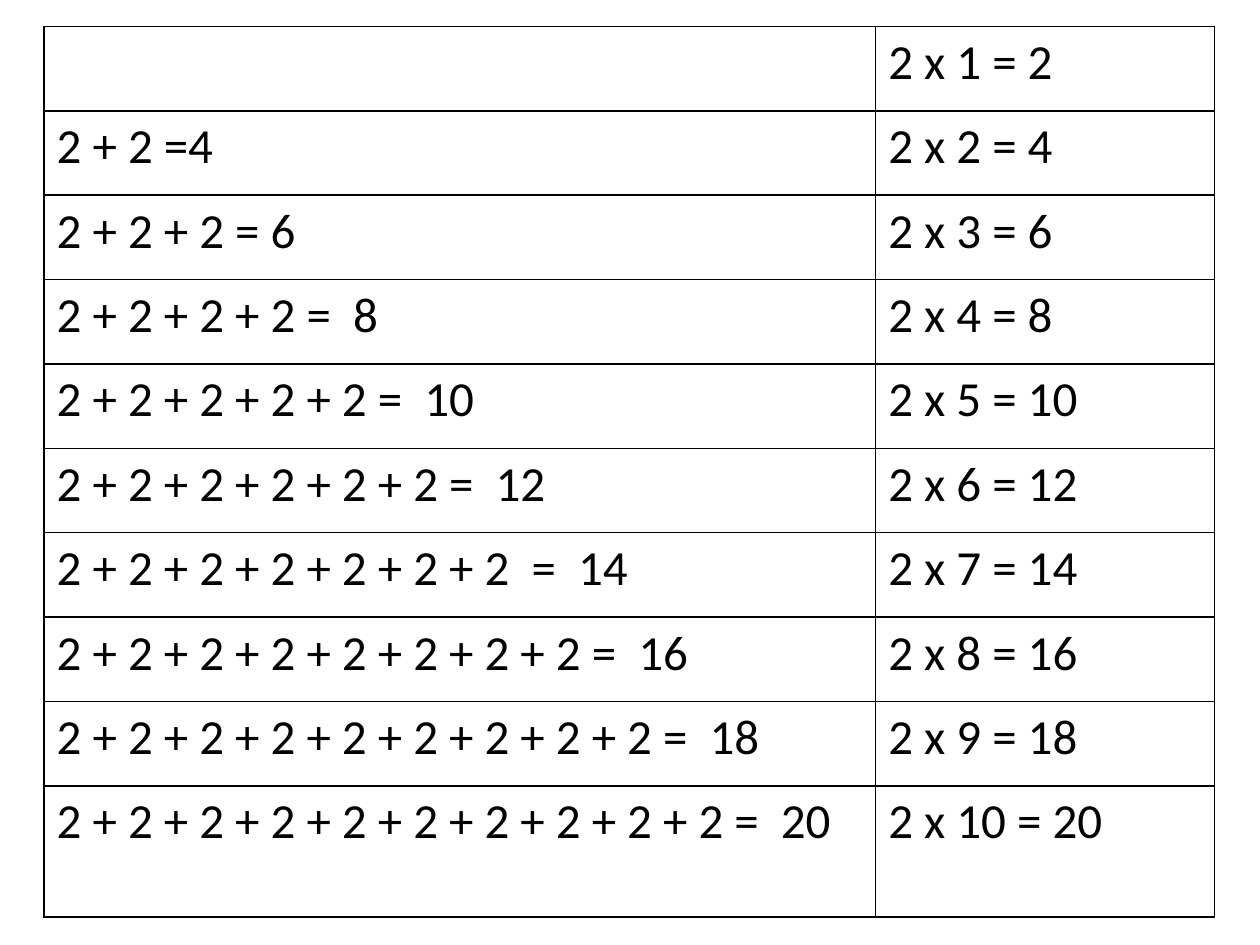
import pptx
import pptx.util
import pptx.dml.color
import pptx.oxml
import pptx.oxml.ns
from pptx.util import Inches

COLORS = {"ink": "000000", "paper": "FFFFFF"}
FONT = "Calibri"
COUNT = 10
SIGNS = {2: " =", 3: " = ", 7: "  =  "}  # spacing that differs by row


def write(cell, text, size=28, color="ink"):
    par = cell.text_frame.paragraphs[0]
    run = par.add_run()
    run.text = text
    run.font.size = pptx.util.Pt(size)
    run.font.name = FONT
    run.font.color.rgb = pptx.dml.color.RGBColor.from_string(COLORS[color])


def frame(cell, color="ink", width=1):
    cell.fill.solid()
    cell.fill.fore_color.rgb = pptx.dml.color.RGBColor.from_string(COLORS["paper"])
    props = cell._tc.get_or_add_tcPr()
    for spot, side in enumerate(("lnL", "lnR", "lnT", "lnB")):
        line = pptx.oxml.parse_xml(
            f'<a:{side} {pptx.oxml.ns.nsdecls("a")} w="{pptx.util.Pt(width)}">'
            f'<a:solidFill><a:srgbClr val="{COLORS[color]}"/></a:solidFill></a:{side}>')
        props.insert(spot, line)


# Slide
deck = pptx.Presentation()
deck.slide_width, deck.slide_height = Inches(10), Inches(7.5)
slide = deck.slides.add_slide(deck.slide_layouts[6])

# Table grid
table = slide.shapes.add_table(
    COUNT, 2, Inches(0.35), Inches(0.21), Inches(9.29), Inches(7.09)).table
table.first_row = table.horz_banding = False
for col, width in zip(table.columns, (6.6, 2.69)):
    col.width = Inches(width)
for row in table.rows:
    row.height = Inches(0.67)
table.rows[COUNT - 1].height = Inches(1.04)

# Sums on the left, products on the right
for num in range(1, COUNT + 1):
    left, right = table.cell(num - 1, 0), table.cell(num - 1, 1)
    if num > 1:
        write(left, " + ".join(["2"] * num) + SIGNS.get(num, " =  ") + str(2 * num))
    write(right, f"2 х {num} = {2 * num}")
    frame(left)
    frame(right)

deck.save("out.pptx")
